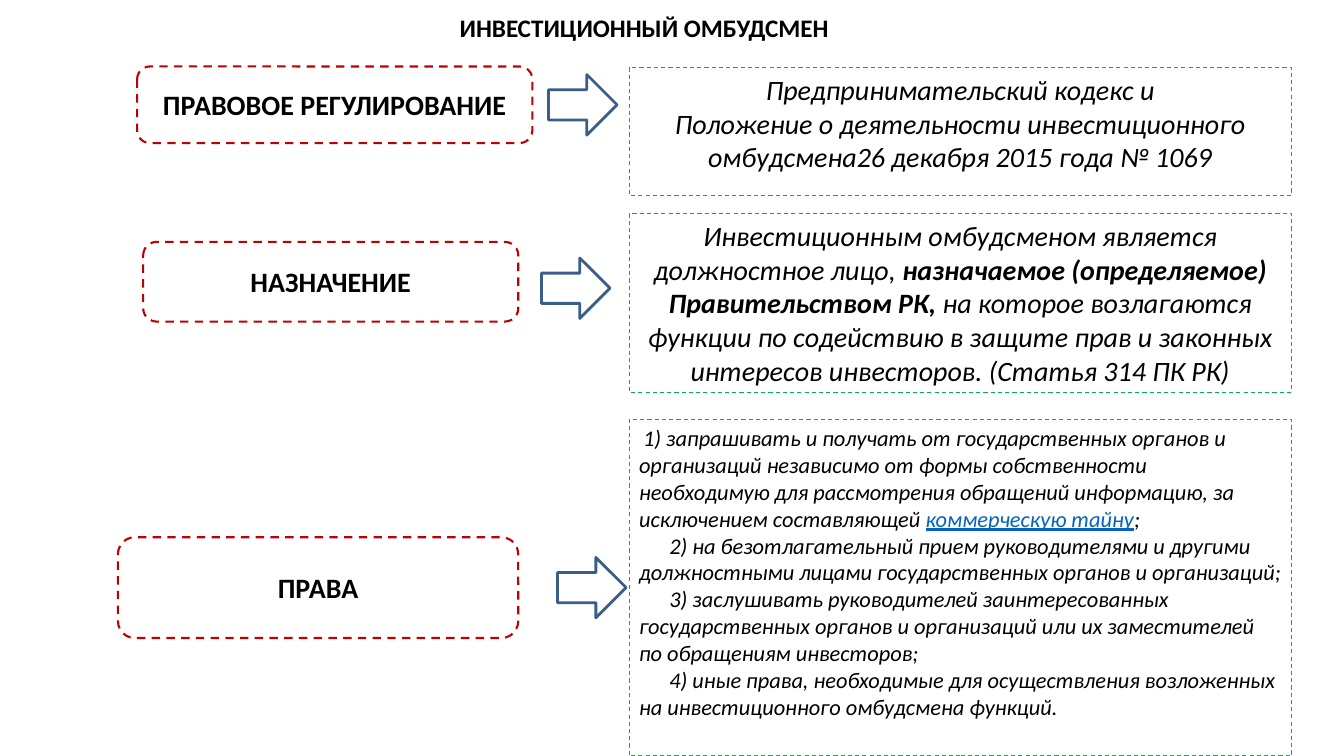
from pptx import Presentation, util as u
from pptx.dml.color import RGBColor
from pptx.enum import dml, shapes, text
from pptx.util import Inches

FONT = "Calibri"
BLACK, RED, GREEN, BLUE, LINK = "000000", "C00000", "00B050", "395E89", "0563C1"
ANSWER_LEFT, ANSWER_WIDTH = 6.24, 6.57


def color(value):
    return RGBColor.from_string(value)


def write(frame, paragraphs, size=20, align=text.PP_ALIGN.CENTER,
          anchor=text.MSO_ANCHOR.TOP, wrap=True, indents=(), **style):
    """Each paragraph is a list of (words, format overrides) runs."""
    frame.word_wrap = wrap
    frame.vertical_anchor = anchor
    for number, runs in enumerate(paragraphs):
        paragraph = frame.add_paragraph() if number else frame.paragraphs[0]
        paragraph.alignment = align
        if indents:
            paragraph._p.get_or_add_pPr().set("indent", str(Inches(indents[number])))
        for words, changes in runs:
            look = {**style, **changes}
            run = paragraph.add_run()
            run.text = words
            run.font.name = FONT
            run.font.size = u.Pt(size)
            run.font.bold = look.get("bold", False)
            run.font.italic = look.get("italic", False)
            run.font.underline = look.get("underline", False)
            run.font.color.rgb = color(look.get("ink", BLACK))


def outline(slide, kind, box, line_color, width, dashed=True):
    shape = slide.shapes.add_shape(kind, *map(Inches, box))
    shape.shadow.inherit = False
    shape.fill.background()
    shape.line.color.rgb = color(line_color)
    shape.line.width = u.Pt(width)
    if dashed:
        shape.line.dash_style = dml.MSO_LINE.DASH
    return shape


def topic(slide, box, words):
    shape = outline(slide, shapes.MSO_SHAPE.ROUNDED_RECTANGLE, box, RED, 1.5)
    write(shape.text_frame, [[(words, {})]], anchor=text.MSO_ANCHOR.MIDDLE, bold=True)


def arrow(slide, left, top):
    outline(slide, shapes.MSO_SHAPE.RIGHT_ARROW, (left, top, 0.68, 0.6), BLUE, 2, dashed=False)


def answer(slide, top, height, paragraphs, **style):
    box = (ANSWER_LEFT, top, ANSWER_WIDTH, height)
    shape = outline(slide, shapes.MSO_SHAPE.RECTANGLE, box, GREEN, 0.75)
    write(shape.text_frame, paragraphs, italic=True, **style)


def title(slide, words):
    box = slide.shapes.add_textbox(*map(Inches, (4.44, 0.07, 3.9, 0.4)))
    write(box.text_frame, [[(words, {})]], size=18, wrap=False, bold=True)


def main():
    deck = Presentation()
    deck.slide_width, deck.slide_height = Inches(13.33), Inches(7.5)
    slide = deck.slides.add_slide(deck.slide_layouts[6])

    title(slide, "ИНВЕСТИЦИОННЫЙ ОМБУДСМЕН")

    topic(slide, (1.36, 0.66, 3.92, 0.76), "ПРАВОВОЕ РЕГУЛИРОВАНИЕ")
    arrow(slide, 5.44, 0.74)
    answer(slide, 0.67, 1.27, [
        [("Предпринимательский кодекс и", {})],
        [("Положение о деятельности инвестиционного "
          "омбудсмена26 декабря 2015 года № 1069", {})],
    ])

    topic(slide, (1.42, 2.4, 3.72, 0.79), "НАЗНАЧЕНИЕ")
    arrow(slide, 5.37, 2.56)
    answer(slide, 2.12, 1.77, [[
        ("Инвестиционным омбудсменом является должностное лицо, ", {}),
        ("назначаемое (определяемое) Правительством РК, ", {"bold": True}),
        ("на которое возлагаются функции по содействию в защите прав "
         "и законных интересов инвесторов. (Статья 314 ПК РК)", {}),
    ]])

    topic(slide, (1.17, 5.33, 3.97, 1), "ПРАВА")
    arrow(slide, 5.53, 5.53)
    answer(slide, 4.16, 3.34, [
        [("1) запрашивать и получать от государственных органов и организаций "
          "независимо от формы собственности необходимую для рассмотрения "
          "обращений информацию, за исключением составляющей ", {}),
         ("коммерческую тайну", {"ink": LINK, "underline": True}),
         (";", {})],
        [("2) на безотлагательный прием руководителями и другими должностными "
          "лицами государственных органов и организаций;", {})],
        [("3) заслушивать руководителей заинтересованных государственных органов "
          "и организаций или их заместителей по обращениям инвесторов;", {})],
        [("4) иные права, необходимые для осуществления возложенных "
          "на инвестиционного омбудсмена функций.", {})],
    ], size=16, align=text.PP_ALIGN.LEFT, indents=(0.04, 0.3, 0.3, 0.3))

    deck.save("out.pptx")


if __name__ == "__main__":
    main()
